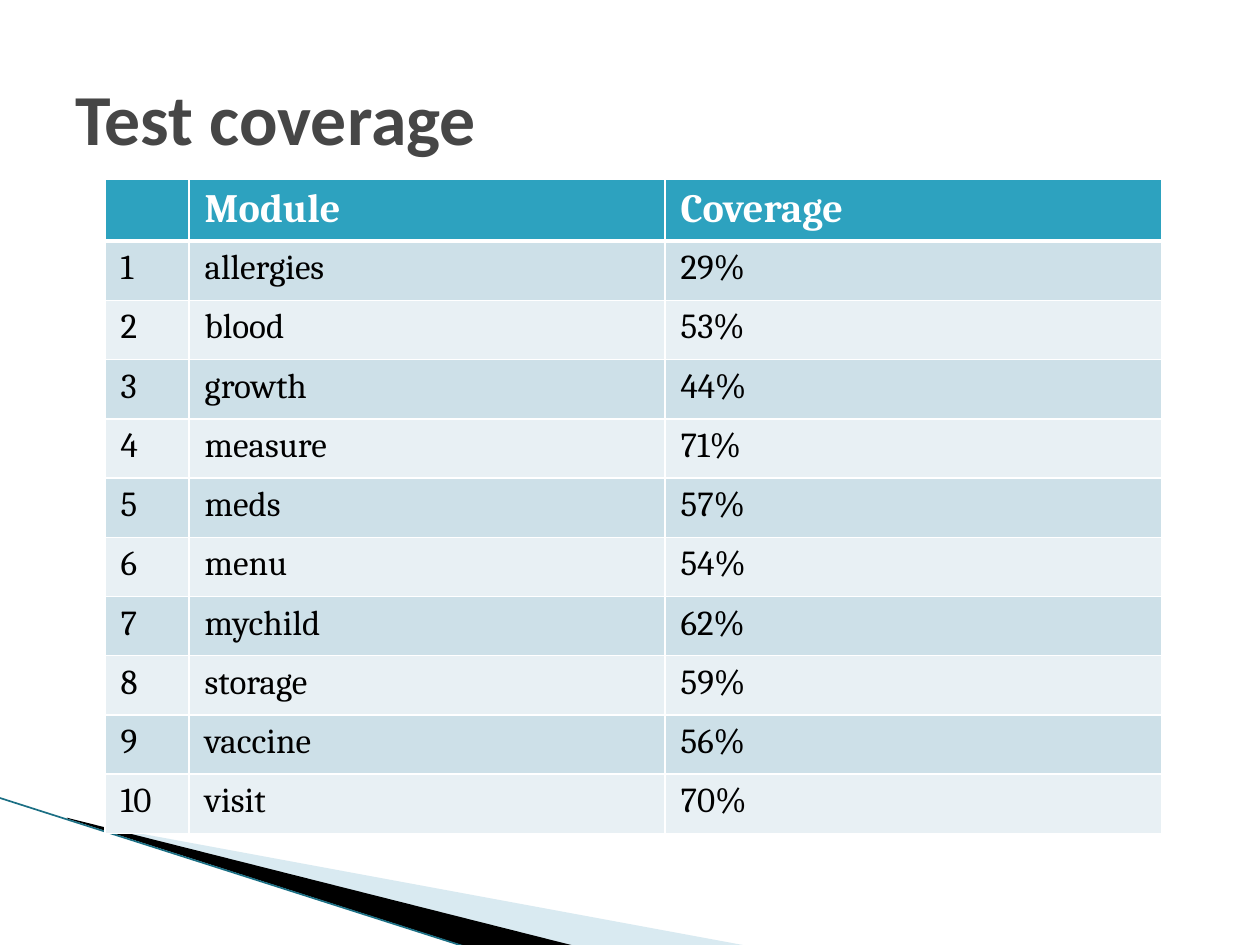
from lxml import etree
from pptx import Presentation
from pptx.dml.color import RGBColor
from pptx.enum.shapes import MSO_CONNECTOR
from pptx.enum.text import MSO_ANCHOR
from pptx.oxml.ns import qn
from pptx.util import Pt

STRAIGHT = MSO_CONNECTOR.STRAIGHT
MIDDLE = MSO_ANCHOR.MIDDLE
TOP = MSO_ANCHOR.TOP

WHITE = RGBColor(0xFF, 0xFF, 0xFF)
BLACK = RGBColor(0x00, 0x00, 0x00)
TITLE_GRAY = RGBColor(0x46, 0x46, 0x46)
HEADER_TEAL = RGBColor(0x2D, 0xA2, 0xBF)
BAND_DARK = RGBColor(0xCD, 0xE0, 0xE8)
BAND_LIGHT = RGBColor(0xE8, 0xF0, 0xF4)
SWOOSH_BLUE = RGBColor(0xA0, 0xCB, 0xDC)
SWOOSH_LINE = RGBColor(0x1B, 0x6F, 0x84)

COVERAGE = [
    ("allergies", 29), ("blood", 53), ("growth", 44), ("measure", 71),
    ("meds", 57), ("menu", 54), ("mychild", 62), ("storage", 59),
    ("vaccine", 56), ("visit", 70),
]


def write_text(text_frame, text, *, font, size, color, bold=False):
    paragraph = text_frame.paragraphs[0]
    run = paragraph.add_run()
    run.text = text
    run.font.name = font
    run.font.size = Pt(size)
    run.font.bold = bold
    run.font.color.rgb = color


def add_wedge(slide, left, top, points, color, alpha=None):
    corners = [(Pt(left + x), Pt(top + y)) for x, y in points]
    builder = slide.shapes.build_freeform(*corners[0], scale=1.0)
    builder.add_line_segments(corners[1:], close=True)
    wedge = builder.convert_to_shape()
    wedge.shadow.inherit = False
    wedge.line.fill.background()
    wedge.fill.solid()
    wedge.fill.fore_color.rgb = color
    if alpha is not None:
        color_element = wedge.fill._xPr.find(".//" + qn("a:srgbClr"))
        etree.SubElement(color_element, qn("a:alpha"), val=str(alpha * 1000))


def add_swoosh(slide, left, top, width, height):
    # Pale and black wedges
    add_wedge(slide, left, top,
              [(39.6, 13), (width, height), (328.6, height), (39.6, 12.2)],
              SWOOSH_BLUE, alpha=40)
    add_wedge(slide, left, top,
              [(38.2, 11.5), (329, height), (268, height + 0.7), (38.9, 12.2)],
              BLACK)
    # Edge line
    edge = slide.shapes.add_connector(
        STRAIGHT, Pt(left - 0.7), Pt(top), Pt(left + 267.1), Pt(top + height + 0.7))
    edge.line.color.rgb = SWOOSH_LINE
    edge.line.width = Pt(0.95)
    etree.SubElement(edge._element.spPr, qn("a:effectLst"))


def add_title(slide, left, top, width, height):
    box = slide.shapes.add_textbox(Pt(left), Pt(top), Pt(width), Pt(height))
    box.text_frame.word_wrap = True
    box.text_frame.vertical_anchor = MIDDLE
    write_text(box.text_frame, "Test coverage", font="Calibri", size=41,
               color=TITLE_GRAY, bold=True)


def set_borders(cell, **widths):
    properties = cell._tc.get_or_add_tcPr()
    for position, (side, width) in enumerate(widths.items()):
        line = etree.Element(qn("a:ln" + side), w=str(Pt(width)))
        fill = etree.SubElement(line, qn("a:solidFill"))
        etree.SubElement(fill, qn("a:srgbClr"), val=str(WHITE))
        properties.insert(position, line)


def add_coverage_table(slide, left, top, column_widths, row_height):
    rows = [("", "Module", "Coverage")]
    rows += [(str(number), module, f"{percent}%")
             for number, (module, percent) in enumerate(COVERAGE, 1)]
    frame = slide.shapes.add_table(
        len(rows), len(column_widths), Pt(left), Pt(top),
        Pt(sum(column_widths)), Pt(row_height * len(rows)))
    table = frame.table
    for column, width in zip(table.columns, column_widths):
        column.width = Pt(width)

    for row_index, values in enumerate(rows):
        table.rows[row_index].height = Pt(row_height)
        is_header = row_index == 0
        band = BAND_DARK if row_index % 2 else BAND_LIGHT
        for column_index, text in enumerate(values):
            cell = table.cell(row_index, column_index)
            cell.margin_left = cell.margin_right = Pt(9)
            cell.margin_top = cell.margin_bottom = Pt(4)
            cell.vertical_anchor = TOP
            cell.fill.solid()
            cell.fill.fore_color.rgb = HEADER_TEAL if is_header else band
            set_borders(cell, L=1, R=1, T=3 if row_index == 1 else 1,
                        B=3 if is_header else 1)
            if text:
                write_text(cell.text_frame, text, font="Cambria",
                           size=23 if is_header else 20,
                           color=WHITE if is_header else BLACK, bold=is_header)


def main():
    presentation = Presentation()
    presentation.slide_width = Pt(720)
    presentation.slide_height = Pt(540)
    slide = presentation.slides.add_slide(presentation.slide_layouts[6])
    add_swoosh(slide, 0, 455.8, 428.4, 84.9)
    add_title(slide, 36, 21.6, 648, 90)
    add_coverage_table(slide, 60, 102.2, (48, 272, 284), 33.85)
    presentation.save("out.pptx")


if __name__ == "__main__":
    main()
